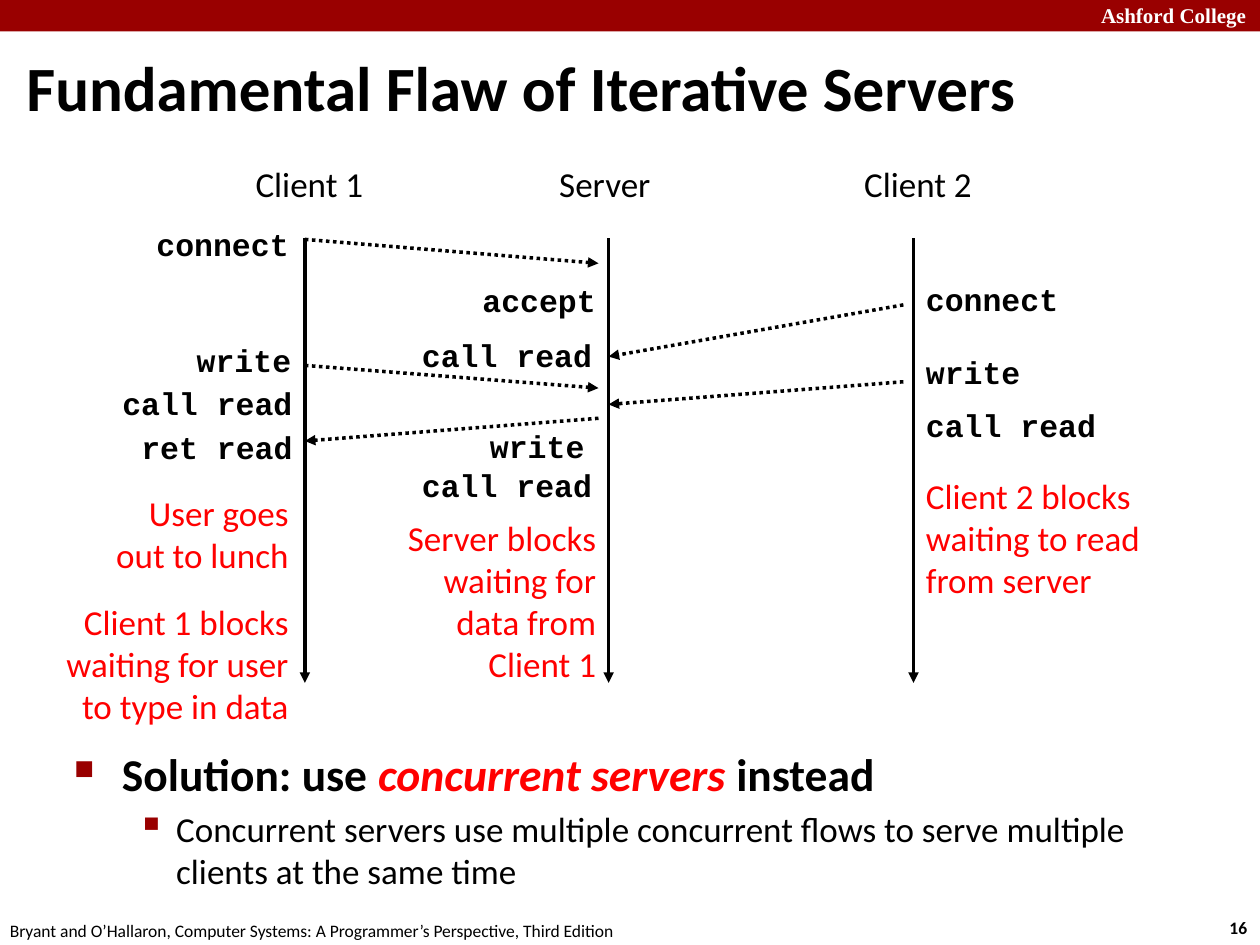
from collections import namedtuple

from lxml import etree
from pptx import Presentation
from pptx.dml.color import RGBColor
from pptx.enum.dml import MSO_LINE
from pptx.enum.shapes import MSO_CONNECTOR as Connector, MSO_SHAPE as Shape
from pptx.enum.text import MSO_ANCHOR as Anchor, PP_ALIGN as Align
from pptx.oxml.ns import qn
from pptx.util import Inches, Pt

COLORS = {"banner": "990000", "text": "000000", "accent": "FF0000", "light": "FFFFFF"}
BODY, CODE, SERIF = "Calibri", "Courier New", "Times New Roman"

Box = namedtuple("Box", "left top width height")

# Lifeline positions across the diagram
LIFELINES = {"Client 1": 2.42, "Server": 4.83, "Client 2": 7.25}
LIFELINE_TOP, LIFELINE_END = 0.65, 4.18
MESSAGE_GAP = 0.08

# sender, receiver, start height, end height
MESSAGES = [
    ("Client 1", "Server", 0.66, 0.85),
    ("Client 2", "Server", 1.18, 1.59),
    ("Client 1", "Server", 1.66, 1.84),
    ("Client 2", "Server", 1.79, 1.97),
    ("Server", "Client 1", 2.08, 2.26),
]

# call, left, top, width, alignment
CALLS = [
    ("connect", 1.13, 0.50, 1.26, Align.RIGHT),
    ("write", 1.45, 1.42, 0.96, Align.RIGHT),
    ("call read", 0.86, 1.76, 1.56, Align.RIGHT),
    ("ret read", 1.01, 2.11, 1.41, Align.RIGHT),
    ("accept", 3.73, 0.94, 1.11, Align.LEFT),
    ("call read", 3.25, 1.38, 1.56, Align.LEFT),
    ("write", 3.79, 2.10, 0.96, Align.LEFT),
    ("call read", 3.25, 2.41, 1.56, Align.LEFT),
    ("connect", 7.25, 0.93, 1.26, Align.LEFT),
    ("write", 7.25, 1.51, 0.96, Align.LEFT),
    ("call read", 7.25, 1.93, 1.56, Align.LEFT),
]

# lines, box within the diagram, alignment
BLOCKING_NOTES = [
    (["User goes", "out to lunch", "Client 1 blocks", "waiting for user", "to type in data"],
     Box(0.35, 2.61, 2.04, 1.99), Align.RIGHT),
    (["Server blocks", "waiting for", "data from", "Client 1"],
     Box(3.12, 2.81, 1.71, 1.45), Align.RIGHT),
    (["Client 2 blocks", "waiting to read", "from server"],
     Box(7.25, 2.48, 1.92, 1.11), Align.LEFT),
]


def rgb(name):
    return RGBColor.from_string(COLORS[name])


def set_font(font, size, color="text", name=BODY, bold=False):
    font.name, font.size, font.bold = name, Pt(size), bold
    font.color.rgb = rgb(color)


def add_text(slide, box, lines, size, color="text", name=BODY, bold=False,
             align=Align.LEFT):
    frame = slide.shapes.add_textbox(*map(Inches, box)).text_frame
    frame.word_wrap = False
    frame.text = "\n".join(lines)
    for paragraph in frame.paragraphs:
        paragraph.alignment = align
        set_font(paragraph.font, size, color, name, bold)
    return frame


def add_arrow(slide, start, end, dotted=False):
    arrow = slide.shapes.add_connector(Connector.STRAIGHT, *map(Inches, start + end))
    arrow.line.color.rgb = rgb("text")
    arrow.line.width = Pt(2)
    if dotted:
        arrow.line.dash_style = MSO_LINE.ROUND_DOT
    properties = arrow._element.spPr
    etree.SubElement(properties.find(qn("a:ln")), qn("a:tailEnd"), type="triangle")
    etree.SubElement(properties, qn("a:effectLst"))


def add_banner(slide, box):
    banner = slide.shapes.add_shape(Shape.RECTANGLE, *map(Inches, box))
    banner.shadow.inherit = False
    banner.fill.solid()
    banner.fill.fore_color.rgb = rgb("banner")
    banner.line.fill.background()
    school = Box(box.left + box.width - 1.36, box.top - 0.03, 1.43, 0.3)
    add_text(slide, school, ["Ashford College"], 12, "light", SERIF, True)


def add_title(slide, box):
    title = slide.shapes.title
    title.left, title.top, title.width, title.height = map(Inches, box)
    frame = title.text_frame
    frame.text = "Fundamental Flaw of Iterative Servers"
    frame.vertical_anchor = Anchor.MIDDLE
    frame.paragraphs[0].alignment = Align.LEFT
    set_font(frame.paragraphs[0].font, 36, bold=True)


def add_sequence_diagram(slide, box):
    """Draw the lifelines, their messages, calls and blocking notes."""
    def place(left, top, width, height):
        return Box(box.left + left, box.top + top, width, height)

    def point(x, y):
        return (box.left + x, box.top + y)

    for lines, area, align in BLOCKING_NOTES:
        frame = add_text(slide, place(*area), lines, 20, "accent", align=align)
        if "User goes" in lines:
            frame.paragraphs[2].space_before = Pt(14.5)

    for party, x in LIFELINES.items():
        add_text(slide, place(x - 0.49, 0, 1.07, 0.44), [party], 20)
        add_arrow(slide, point(x, LIFELINE_TOP), point(x, LIFELINE_END))

    for sender, receiver, start_y, end_y in MESSAGES:
        start_x, end_x = LIFELINES[sender], LIFELINES[receiver]
        if start_x < end_x:
            end_x -= MESSAGE_GAP
        else:
            start_x -= MESSAGE_GAP
        add_arrow(slide, point(start_x, start_y), point(end_x, end_y), dotted=True)

    for call, left, top, width, align in CALLS:
        add_text(slide, place(left, top, width, 0.4), [call], 18, name=CODE,
                 bold=True, align=align)


def add_bullet(paragraph, symbol, percent, margin, hanging):
    properties = paragraph._p.get_or_add_pPr()
    properties.set("marL", str(Inches(margin)))
    properties.set("indent", str(-Inches(hanging)))
    color = etree.SubElement(properties, qn("a:buClr"))
    etree.SubElement(color, qn("a:srgbClr"), val=COLORS["banner"])
    etree.SubElement(properties, qn("a:buSzPct"), val=str(percent * 1000))
    etree.SubElement(properties, qn("a:buChar"), char=symbol)


def add_solution(slide, box):
    frame = slide.shapes.add_textbox(*map(Inches, box)).text_frame
    frame.word_wrap = True
    solution, detail = frame.paragraphs[0], frame.add_paragraph()

    solution.space_before = Pt(5.2)
    add_bullet(solution, "■", 60, 0.38, 0.38)
    for text, color in [("Solution: use ", "text"), ("concurrent servers ", "accent"),
                        ("instead", "text")]:
        run = solution.add_run()
        run.text = text
        set_font(run.font, 26, color, bold=True)
        run.font.italic = color == "accent"

    detail.level = 1
    detail.space_before = Pt(4)
    add_bullet(detail, "▪", 110, 0.81, 0.31)
    detail.text = ("Concurrent servers use multiple concurrent flows to serve multiple "
                   "clients at the same time")
    set_font(detail.font, 20)


def add_footer(slide, box):
    source = "Bryant and O’Hallaron, Computer Systems: A Programmer’s Perspective, Third Edition"
    add_text(slide, Box(box.left - 0.02, box.top + 0.02, 5.08, 0.27), [source], 10)
    add_text(slide, Box(box.left + box.width - 0.34, box.top, 0.37, 0.27), ["16"], 10,
             bold=True)


def main():
    presentation = Presentation()
    presentation.slide_width, presentation.slide_height = Inches(10), Inches(7.5)
    slide = presentation.slides.add_slide(presentation.slide_layouts[5])
    add_banner(slide, Box(0, 0, 10, 0.25))
    add_title(slide, Box(0.11, 0.37, 9.83, 0.63))
    add_sequence_diagram(slide, Box(0, 1.24, 10, 4.6))
    add_solution(slide, Box(0.49, 5.87, 9.26, 1.26))
    add_footer(slide, Box(0, 7.23, 10, 0.27))
    presentation.save("out.pptx")


if __name__ == "__main__":
    main()
